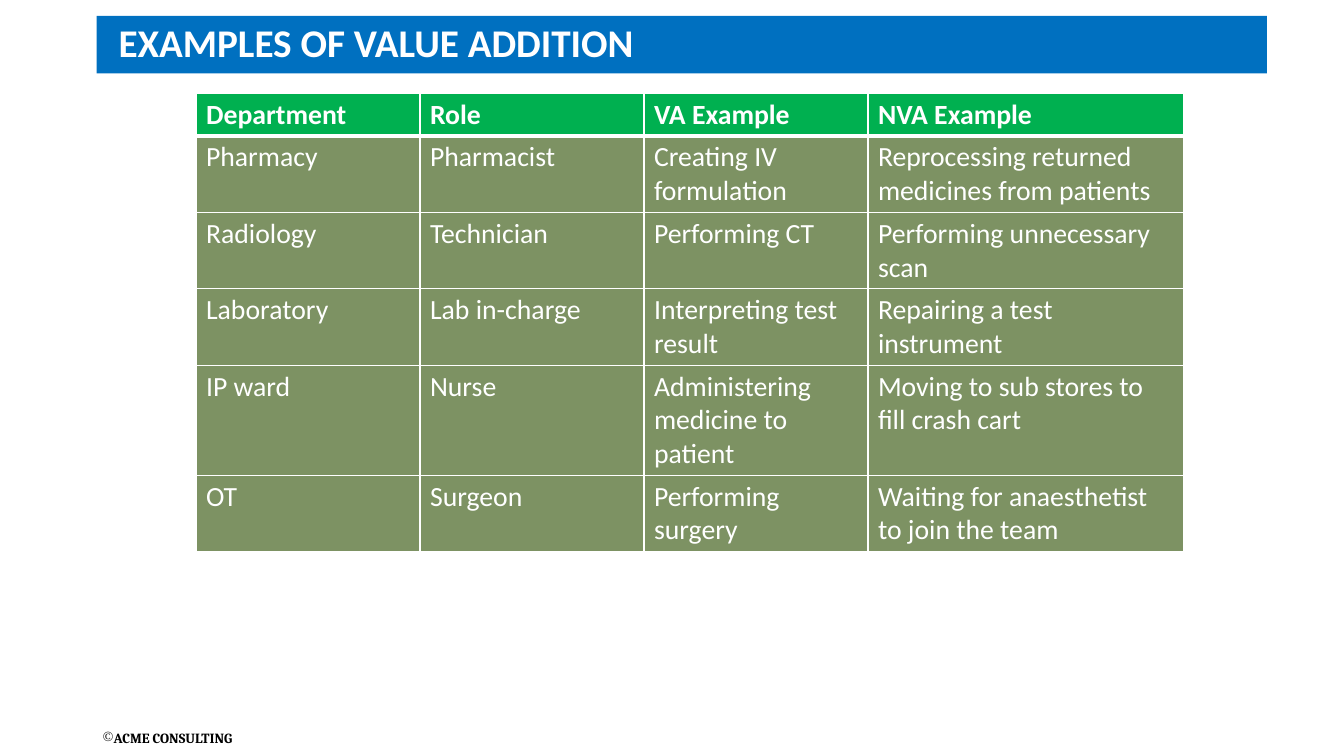
"""Build the slide on examples of value addition."""
import pptx
import pptx.dml.color
import pptx.enum.shapes
import pptx.enum.text
import pptx.oxml
import pptx.oxml.ns
import pptx.util

Pt = pptx.util.Pt
RGB = pptx.dml.color.RGBColor
WHITE = RGB(0xFF, 0xFF, 0xFF)
BLACK = RGB(0x00, 0x00, 0x00)
BLUE = RGB(0x00, 0x70, 0xC0)
GREEN = RGB(0x00, 0xB0, 0x50)
OLIVE = RGB(0x7D, 0x92, 0x63)

TITLE = "EXAMPLES OF VALUE ADDITION"
OWNER = "ACME CONSULTING"
ROWS = [
    ("Department", "Role", "VA Example", "NVA Example"),
    ("Pharmacy", "Pharmacist", "Creating IV formulation",
     "Reprocessing returned medicines from patients"),
    ("Radiology", "Technician", "Performing CT", "Performing unnecessary scan"),
    ("Laboratory", "Lab in-charge", "Interpreting test result",
     "Repairing a test instrument"),
    ("IP ward", "Nurse", "Administering medicine to patient",
     "Moving to sub stores to fill crash cart"),
    ("OT", "Surgeon", "Performing surgery",
     "Waiting for anaesthetist to join the team"),
]
WIDTHS = (160, 160, 160, 225.5)
LINES = (1, 2, 2, 2, 3, 2)
LINE, PAD = 24, 3.3


def write(para, text, size, face, color, bold):
    """Add one styled run to a paragraph."""
    run = para.add_run()
    run.text = text
    font = run.font
    font.size, font.name, font.bold = Pt(size), face, bold
    font.color.rgb = color


def label(slide, box, wrap):
    """Add a text box that fits its text and return its first paragraph."""
    frame = slide.shapes.add_textbox(*map(Pt, box)).text_frame
    frame.word_wrap = wrap
    frame.auto_size = pptx.enum.text.MSO_AUTO_SIZE.SHAPE_TO_FIT_TEXT
    return frame.paragraphs[0]


def edge(cell, side, width):
    """Draw one white border of a cell."""
    xml = (f'<a:{side} {pptx.oxml.ns.nsdecls("a")} w="{Pt(width)}">'
           f'<a:solidFill><a:srgbClr val="{WHITE}"/></a:solidFill></a:{side}>')
    props = cell._tc.get_or_add_tcPr()
    props.append(pptx.oxml.parse_xml(xml))


def grid(slide):
    """Add the table of examples."""
    tall = [LINE * count + 2 * PAD for count in LINES]
    shape = slide.shapes.add_table(
        len(ROWS), len(WIDTHS), Pt(140), Pt(66.5), Pt(sum(WIDTHS)), Pt(sum(tall)))
    table = shape.table
    table.horz_banding = False
    for col, width in zip(table.columns, WIDTHS):
        col.width = Pt(width)
    for r, (row, height) in enumerate(zip(ROWS, tall)):
        table.rows[r].height = Pt(height)
        head = r == 0
        for c, text in enumerate(row):
            cell = table.cell(r, c)
            cell.margin_top = cell.margin_bottom = Pt(PAD)
            for side in ("lnL", "lnR", "lnT", "lnB"):
                thick = (head and side == "lnB") or (r == 1 and side == "lnT")
                edge(cell, side, 3 if thick else 1)
            cell.fill.solid()
            cell.fill.fore_color.rgb = GREEN if head else OLIVE
            write(cell.text_frame.paragraphs[0], text, 19.8, "Calibri", WHITE, head)


def main():
    """Build and save the slide."""
    deck = pptx.Presentation()
    deck.slide_width, deck.slide_height = Pt(960), Pt(540)
    slide = deck.slides.add_slide(deck.slide_layouts[6])

    foot = label(slide, (66.2, 517.7, 147.6, 19.4), True)
    mark = pptx.oxml.parse_xml(
        f'<a:buChar {pptx.oxml.ns.nsdecls("a")} char="©"/>')
    foot._p.get_or_add_pPr().append(mark)
    write(foot, OWNER, 10, "Cambria", BLACK, True)

    bar = slide.shapes.add_shape(
        pptx.enum.shapes.MSO_SHAPE.RECTANGLE, Pt(69), Pt(11.4), Pt(836), Pt(41))
    bar.shadow.inherit = False
    bar.fill.solid()
    bar.fill.fore_color.rgb = BLUE
    bar.line.fill.background()

    title = label(slide, (77.6, 9.5, 386.6, 41.2), False)
    write(title, TITLE, 28, "Calibri", WHITE, True)
    grid(slide)
    deck.save("out.pptx")


if __name__ == "__main__":
    main()
